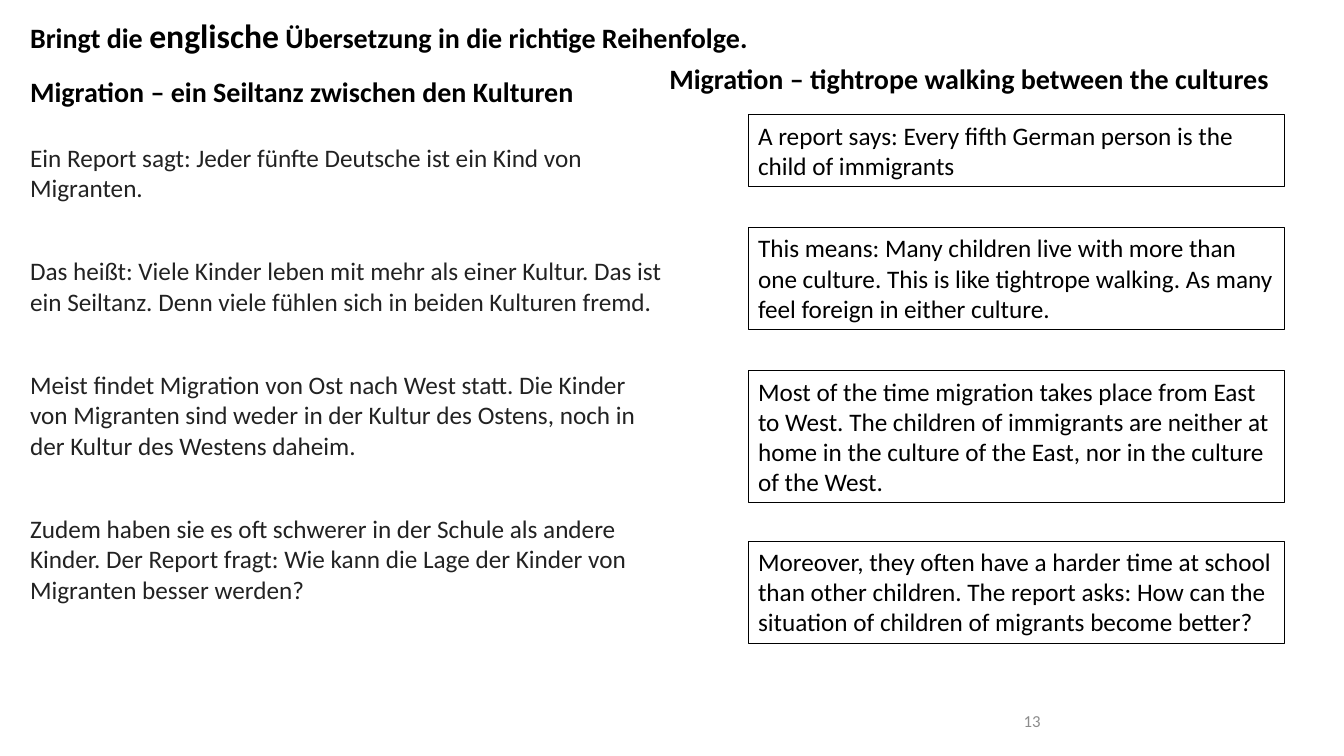
"""Build a slide pairing a German text on migration with its English translation."""
from pptx import Presentation, util as u
from pptx.dml.color import RGBColor
from pptx.enum import shapes, text

COLORS = {"black": "000000", "body": "222222", "number": "8C8C8C"}

prs = Presentation()
prs.slide_width, prs.slide_height = u.Inches(13.33), u.Inches(7.5)
s = prs.slides.add_slide(prs.slide_layouts[6])


def add_text(paragraphs, left, top, width, height, size=18, color="black", bold=False,
             boxed=False, gap=0, align=text.PP_ALIGN.LEFT, anchor=text.MSO_ANCHOR.TOP,
             fit=text.MSO_AUTO_SIZE.SHAPE_TO_FIT_TEXT):
    at = [u.Inches(v) for v in (left, top, width, height)]
    if boxed:
        sp = s.shapes.add_shape(shapes.MSO_SHAPE.RECTANGLE, *at)
        sp.shadow.inherit = False
        sp.fill.background()
        sp.line.color.rgb = RGBColor.from_string(COLORS["black"])
        sp.line.width = u.Pt(0.75)
    else:
        sp = s.shapes.add_textbox(*at)
    tf = sp.text_frame
    tf.word_wrap = True
    tf.auto_size = fit
    tf.vertical_anchor = anchor
    for i, runs in enumerate(paragraphs):
        p = tf.paragraphs[0] if i == 0 else tf.add_paragraph()
        p.alignment = align
        p.space_after = u.Pt(gap if i < len(paragraphs) - 1 else 0)
        for content, run_size in ([(runs, size)] if isinstance(runs, str) else runs):
            r = p.add_run()
            r.text = content
            r.font.name = "Calibri"
            r.font.size = u.Pt(run_size)
            r.font.bold = bold
            r.font.color.rgb = RGBColor.from_string(COLORS[color])


german = [
    "Ein Report sagt: Jeder fünfte Deutsche ist ein Kind von Migranten.",
    "Das heißt: Viele Kinder leben mit mehr als einer Kultur. Das ist ein Seiltanz. "
    "Denn viele fühlen sich in beiden Kulturen fremd.",
    "Meist findet Migration von Ost nach West statt. Die Kinder von Migranten sind weder "
    "in der Kultur des Ostens, noch in der Kultur des Westens daheim.",
    "Zudem haben sie es oft schwerer in der Schule als andere Kinder. Der Report fragt: "
    "Wie kann die Lage der Kinder von Migranten besser werden?",
]
english = [
    (1.14, 2, "A report says: Every fifth German person is the child of immigrants"),
    (2.26, 3, "This means: Many children live with more than one culture. This is like "
              "tightrope walking. As many feel foreign in either culture."),
    (3.68, 4, "Most of the time migration takes place from East to West. The children of "
              "immigrants are neither at home in the culture of the East, nor in the "
              "culture of the West."),
    (5.37, 3, "Moreover, they often have a harder time at school than other children. The "
              "report asks: How can the situation of children of migrants become better?"),
]

add_text(["13"], 7.42, 6.95, 3, 0.4, size=12, color="number", align=text.PP_ALIGN.RIGHT,
         anchor=text.MSO_ANCHOR.MIDDLE, fit=text.MSO_AUTO_SIZE.NONE)
add_text(german, 0.2, 1.36, 6.48, 5.02, color="body", gap=38)
add_text(["Migration – ein Seiltanz zwischen den Kulturen"], 0.2, 0.69, 5.64, 0.44,
         size=20, bold=True)
for top, lines, sentence in english:
    add_text([sentence], 7.42, top, 5.32, 0.11 + 0.3 * lines, boxed=True)
add_text(["Migration – tightrope walking between the cultures"], 6.54, 0.56, 6.67, 0.44,
         size=20, bold=True)
add_text([[("Bringt die ", 20), ("englische", 24),
           (" Übersetzung in die richtige Reihenfolge.", 20)]],
         0.2, 0.1, 7.45, 0.84, bold=True)

prs.save("out.pptx")
